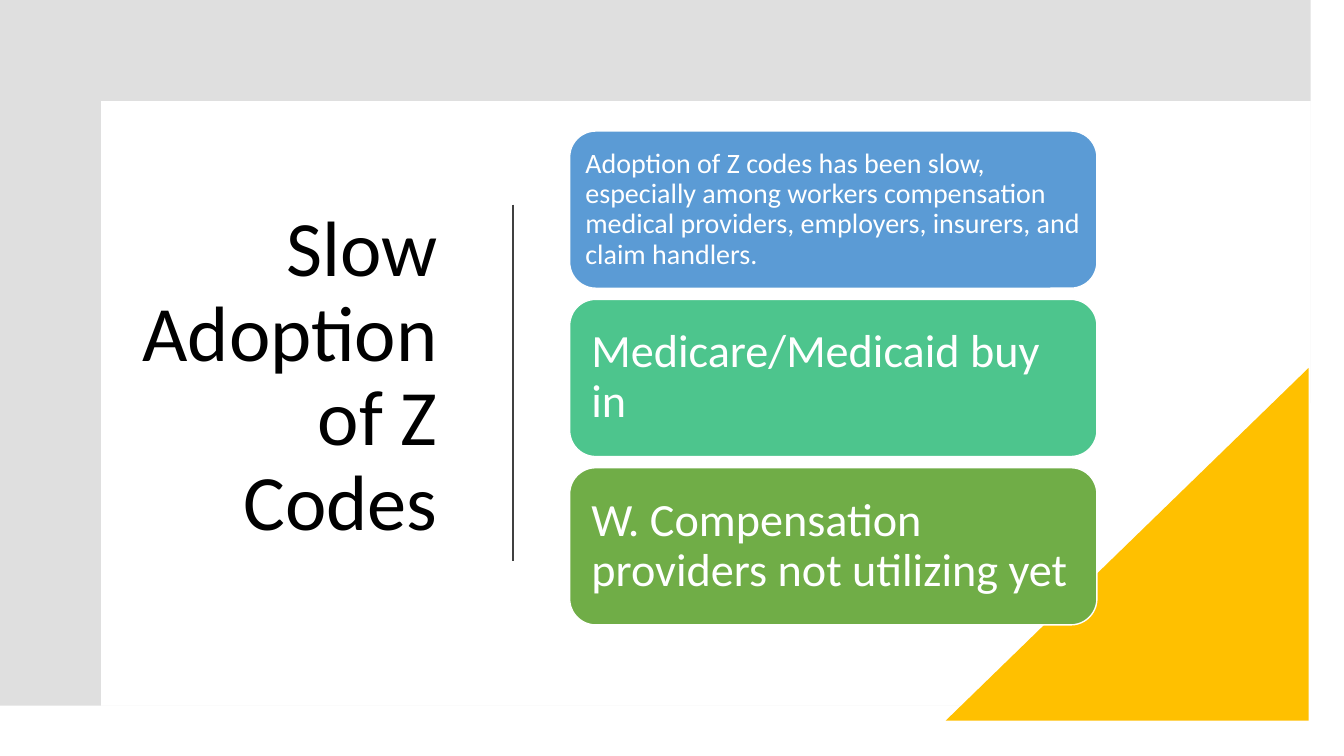
from lxml.etree import SubElement
from pptx import Presentation
from pptx.dml.color import RGBColor
from pptx.enum.shapes import MSO_CONNECTOR, MSO_SHAPE
from pptx.enum.text import MSO_ANCHOR, PP_ALIGN
from pptx.oxml.ns import qn
from pptx.util import Inches, Pt


def rgb(color):
    return RGBColor.from_string(color)


class SlideBuilder:
    font = "Calibri"
    line_spacing = 0.9

    def __init__(self, prs):
        self.s = prs.slides.add_slide(prs.slide_layouts[6])

    def paint(self, sp, fill, line=None):
        sp.shadow.inherit = False
        sp.fill.solid()
        sp.fill.fore_color.rgb = rgb(fill)
        if line:
            sp.line.color.rgb = rgb(line)
            sp.line.width = Pt(1)
        else:
            sp.line.fill.background()

    def set_text(self, sp, text, size, color, inset, align=PP_ALIGN.LEFT):
        tf = sp.text_frame
        tf.word_wrap = True
        tf.vertical_anchor = MSO_ANCHOR.MIDDLE
        tf.margin_left = tf.margin_right = Inches(inset)
        tf.margin_top = tf.margin_bottom = Inches(inset)
        p = tf.paragraphs[0]
        p.text = text
        p.alignment = align
        p.line_spacing = self.line_spacing
        p.font.name = self.font
        p.font.size = Pt(size)
        p.font.color.rgb = rgb(color)

    def frame(self, points, fill, opacity):
        fb = self.s.shapes.build_freeform(*points[0], scale=Inches(1))
        fb.add_line_segments(points[1:], close=True)
        sp = fb.convert_to_shape()
        self.paint(sp, fill)
        clr = sp._element.spPr.find(qn("a:solidFill"))[0]
        SubElement(clr, qn("a:alpha"), val=str(opacity * 1000))

    def corner(self, x, y, w, h, fill):
        sp = self.s.shapes.add_shape(
            MSO_SHAPE.RIGHT_TRIANGLE, Inches(x), Inches(y), Inches(w), Inches(h))
        self.paint(sp, fill)
        sp._element.spPr.find(qn("a:xfrm")).set("flipH", "1")

    def title(self, x, y, w, h, text):
        sp = self.s.shapes.add_textbox(Inches(x), Inches(y), Inches(w), Inches(h))
        self.set_text(sp, text, 56, "000000", 0.1, PP_ALIGN.RIGHT)

    def divider(self, x, top, bottom, color):
        cxn = self.s.shapes.add_connector(
            MSO_CONNECTOR.STRAIGHT, Inches(x), Inches(top), Inches(x), Inches(bottom))
        cxn.line.color.rgb = rgb(color)
        cxn.line.width = Pt(1.5)
        SubElement(cxn._element.spPr, qn("a:effectLst"))

    def card(self, x, y, w, h, fill, text, size, inset):
        sp = self.s.shapes.add_shape(
            MSO_SHAPE.ROUNDED_RECTANGLE, Inches(x), Inches(y), Inches(w), Inches(h))
        self.paint(sp, fill, "FFFFFF")
        self.set_text(sp, text, size, "FFFFFF", inset)


def main():
    prs = Presentation()
    prs.slide_width = Inches(13.33)
    prs.slide_height = Inches(7.5)
    slide = SlideBuilder(prs)

    slide.frame([(0.35, 0.35), (12.98, 0.35), (12.98, 3.49), (12.63, 3.83),
                 (12.63, 0.68), (0.7, 0.68), (0.7, 6.81), (9.56, 6.81),
                 (9.21, 7.15), (0.35, 7.15)], "808080", 25)
    slide.corner(9.38, 3.65, 3.6, 3.5, "FFC000")
    slide.title(1.1, 1.3, 3.34, 4.9, "Slow Adoption of Z Codes")
    slide.divider(5.09, 2.03, 5.57, "404040")

    cards = [
        ("5B9BD5", "Adoption of Z codes has been slow, especially among workers "
         "compensation medical providers, employers, insurers, and claim handlers.",
         20, 0.08),
        ("4DC58D", "Medicare/Medicaid buy in", 33, 0.14),
        ("70AD47", "W. Compensation providers not utilizing yet", 33, 0.14),
    ]
    for i, (fill, text, size, inset) in enumerate(cards):
        slide.card(5.65, 1.3 + i * 1.67, 5.23, 1.56, fill, text, size, inset)

    prs.save("out.pptx")


if __name__ == "__main__":
    main()
